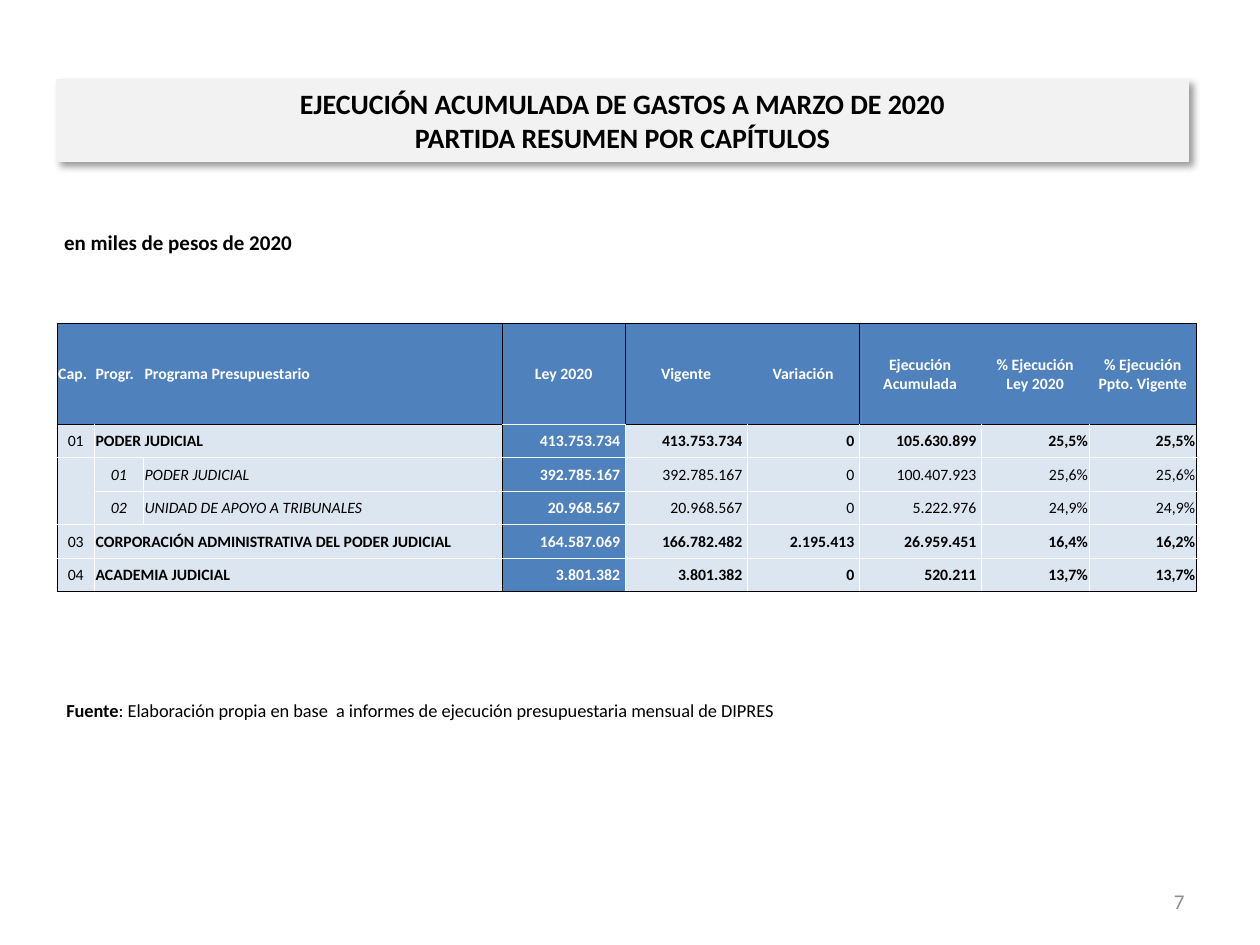
import pptx
import pptx.dml.color
import pptx.enum.shapes
import pptx.enum.text
import pptx.oxml
import pptx.oxml.ns
import pptx.util
from lxml import etree

Pt = pptx.util.Pt
ALIGN = pptx.enum.text.PP_ALIGN
MIDDLE = pptx.enum.text.MSO_ANCHOR.MIDDLE
FONT = "Calibri"
BLACK, WHITE, BLUE, PALE, GREY = "000000", "FFFFFF", "4F81BD", "DCE6F1", "F2F2F2"

COLUMN_WIDTHS = [21.4, 28, 205, 70.2, 69.8, 64, 69.8, 61.7, 61.2]
HEADER_HEIGHT, ROW_HEIGHT = 57.6, 19.15
LAW_COLUMN = 3
HEADERS = ["Cap.", "Progr.", "Programa Presupuestario", "Ley 2020", "Vigente", "Variación",
           "Ejecución\nAcumulada", "% Ejecución\nLey 2020", "% Ejecución\nPpto. Vigente"]
# Chapter, programme, name, then the amounts and percentages
BUDGET_ROWS = [
    ["01", "", "PODER JUDICIAL",
     "413.753.734", "413.753.734", "0", "105.630.899", "25,5%", "25,5%"],
    ["", "01", "PODER JUDICIAL",
     "392.785.167", "392.785.167", "0", "100.407.923", "25,6%", "25,6%"],
    ["", "02", "UNIDAD DE APOYO A TRIBUNALES",
     "20.968.567", "20.968.567", "0", "5.222.976", "24,9%", "24,9%"],
    ["03", "", "CORPORACIÓN ADMINISTRATIVA DEL PODER JUDICIAL",
     "164.587.069", "166.782.482", "2.195.413", "26.959.451", "16,4%", "16,2%"],
    ["04", "", "ACADEMIA JUDICIAL",
     "3.801.382", "3.801.382", "0", "520.211", "13,7%", "13,7%"],
]


def rgb(color):
    return pptx.dml.color.RGBColor.from_string(color)


def add_text(paragraph, text, size, color=BLACK, bold=False, italic=False):
    """Add a run for each line of the text, with line breaks between them."""
    for index, line in enumerate(text.split("\n")):
        if index:
            paragraph.add_line_break()
        run = paragraph.add_run()
        run.text = line
        run.font.name = FONT
        run.font.size = Pt(size)
        run.font.bold = bold
        run.font.italic = italic
        run.font.color.rgb = rgb(color)


def add_text_box(slide, left, top, width, height, align=ALIGN.LEFT):
    box = slide.shapes.add_textbox(Pt(left), Pt(top), Pt(width), Pt(height))
    box.text_frame.word_wrap = True
    paragraph = box.text_frame.paragraphs[0]
    paragraph.alignment = align
    return box, paragraph


def add_title_banner(slide, left, top, width, height):
    banner = slide.shapes.add_shape(pptx.enum.shapes.MSO_SHAPE.RECTANGLE,
                                    Pt(left), Pt(top), Pt(width), Pt(height))
    banner.fill.solid()
    banner.fill.fore_color.rgb = rgb(GREY)
    banner.line.color.rgb = rgb(GREY)
    banner.line.width = Pt(0.75)
    banner.shadow.inherit = False
    effects = banner._element.spPr.find(pptx.oxml.ns.qn("a:effectLst"))
    effects.append(pptx.oxml.parse_xml(
        f'<a:outerShdw {pptx.oxml.ns.nsdecls("a")} blurRad="{Pt(4)}" dist="{Pt(3)}" '
        'dir="2700000" algn="tl" rotWithShape="0">'
        f'<a:srgbClr val="{BLACK}"><a:alpha val="40000"/></a:srgbClr></a:outerShdw>'))
    frame = banner.text_frame
    frame.word_wrap = True
    frame.vertical_anchor = MIDDLE
    frame.paragraphs[0].alignment = ALIGN.CENTER
    add_text(frame.paragraphs[0],
             "EJECUCIÓN ACUMULADA DE GASTOS A MARZO DE 2020\nPARTIDA RESUMEN POR CAPÍTULOS",
             16, bold=True)


def vertical_border(row, edge):
    """Colour of the line at a column edge, or None for no line."""
    if edge in (0, LAW_COLUMN, len(COLUMN_WIDTHS)):
        return BLACK
    if row == 0:
        return BLACK if edge in (4, 6) else None
    return WHITE


def horizontal_border(edge, column):
    """Colour of the line at a row edge, or None for no line."""
    if edge in (0, len(BUDGET_ROWS) + 1):
        return BLACK
    if edge == 1:
        return WHITE if column == LAW_COLUMN else BLACK
    if edge == 3 and column == 0:
        return None
    return WHITE


def style_cell(cell, row, column):
    borders = {"lnL": vertical_border(row, column),
               "lnR": vertical_border(row, column + 1),
               "lnT": horizontal_border(row, column),
               "lnB": horizontal_border(row + 1, column)}
    properties = cell._tc.get_or_add_tcPr()
    for tag, color in borders.items():
        line = etree.SubElement(properties, pptx.oxml.ns.qn(f"a:{tag}"), w=str(Pt(0.5)))
        if color is None:
            etree.SubElement(line, pptx.oxml.ns.qn("a:noFill"))
        else:
            fill = etree.SubElement(line, pptx.oxml.ns.qn("a:solidFill"))
            etree.SubElement(fill, pptx.oxml.ns.qn("a:srgbClr"), val=color)
    cell.fill.solid()
    cell.fill.fore_color.rgb = rgb(BLUE if row == 0 or column == LAW_COLUMN else PALE)
    cell.vertical_anchor = MIDDLE
    cell.margin_left = cell.margin_top = Pt(0.7)
    is_amount = row > 0 and LAW_COLUMN <= column < 7
    cell.margin_right = Pt(2.75 if is_amount else 0.7)
    cell.margin_bottom = Pt(0)


def fill_cell(cell, text, align, **style):
    paragraph = cell.text_frame.paragraphs[0]
    paragraph.alignment = align
    if text:
        add_text(paragraph, text, 9, **style)
    else:
        etree.SubElement(paragraph._p, pptx.oxml.ns.qn("a:endParaRPr"), sz="900")


def add_budget_table(slide, left, top):
    height = HEADER_HEIGHT + ROW_HEIGHT * len(BUDGET_ROWS)
    table = slide.shapes.add_table(len(BUDGET_ROWS) + 1, len(COLUMN_WIDTHS), Pt(left), Pt(top),
                                   Pt(sum(COLUMN_WIDTHS)), Pt(height)).table
    for column, width in zip(table.columns, COLUMN_WIDTHS):
        column.width = Pt(width)
    for index, row in enumerate(table.rows):
        row.height = Pt(ROW_HEIGHT if index else HEADER_HEIGHT)
        for column, cell in enumerate(row.cells):
            style_cell(cell, index, column)

    for column, header in enumerate(HEADERS):
        align = ALIGN.LEFT if column < LAW_COLUMN else ALIGN.CENTER
        fill_cell(table.cell(0, column), header, align, color=WHITE, bold=True)

    for index, (chapter, programme, name, *values) in enumerate(BUDGET_ROWS, 1):
        is_chapter = bool(chapter)
        fill_cell(table.cell(index, 0), chapter, ALIGN.CENTER)
        if is_chapter:
            fill_cell(table.cell(index, 1), name, ALIGN.LEFT, bold=True)
            fill_cell(table.cell(index, 2), "", ALIGN.LEFT)
            table.cell(index, 1).merge(table.cell(index, 2))
        else:
            fill_cell(table.cell(index, 1), programme, ALIGN.CENTER, italic=True)
            fill_cell(table.cell(index, 2), name, ALIGN.LEFT, italic=True)
        for column, value in enumerate(values, LAW_COLUMN):
            is_law = column == LAW_COLUMN
            fill_cell(table.cell(index, column), value, ALIGN.RIGHT,
                      color=WHITE if is_law else BLACK, bold=is_chapter or is_law)


def add_unit_note(slide, left, top, width, height):
    _, paragraph = add_text_box(slide, left, top, width, height)
    add_text(paragraph, "en miles de pesos de 2020", 12, bold=True)


def add_source_note(slide, left, top, width, height):
    _, paragraph = add_text_box(slide, left, top, width, height)
    add_text(paragraph, "Fuente", 10.5, bold=True)
    add_text(paragraph, ": Elaboración propia en base  a informes de ejecución "
             "presupuestaria mensual de DIPRES", 10.5)


def add_page_number(slide, left, top, width, height):
    box, paragraph = add_text_box(slide, left, top, width, height, ALIGN.RIGHT)
    box.text_frame.vertical_anchor = MIDDLE
    add_text(paragraph, "7", 12, "8C8C8C")


def main():
    presentation = pptx.Presentation()
    presentation.slide_width = Pt(720)
    presentation.slide_height = Pt(540)
    slide = presentation.slides.add_slide(presentation.slide_layouts[6])
    add_page_number(slide, 516, 500.5, 168, 28.8)
    add_source_note(slide, 30.8, 396, 662, 28.8)
    add_unit_note(slide, 29.6, 127.5, 648, 36)
    add_title_banner(slide, 32.4, 45.4, 646.6, 46.8)
    add_budget_table(slide, 32.6, 184.8)
    presentation.save("out.pptx")


if __name__ == "__main__":
    main()
